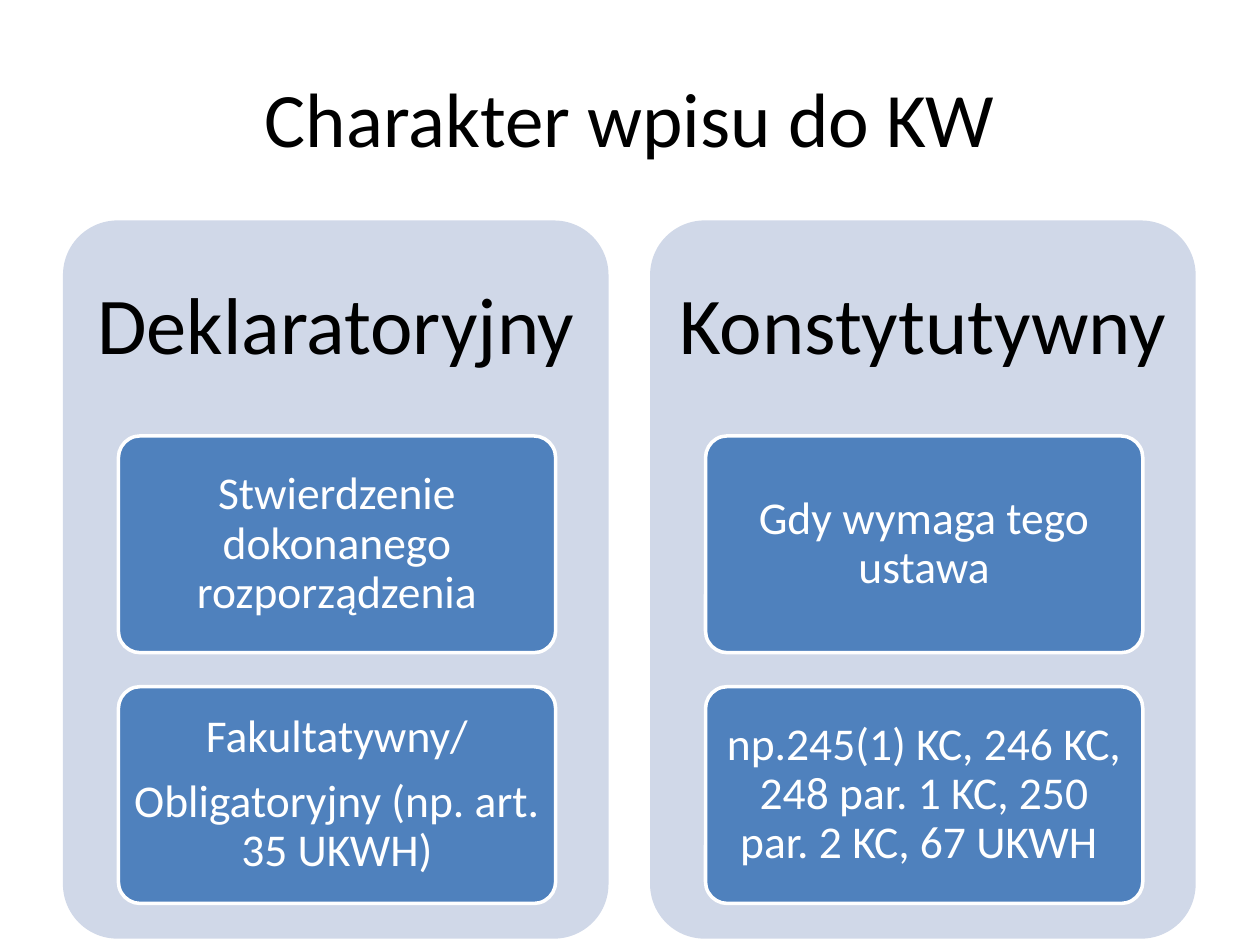
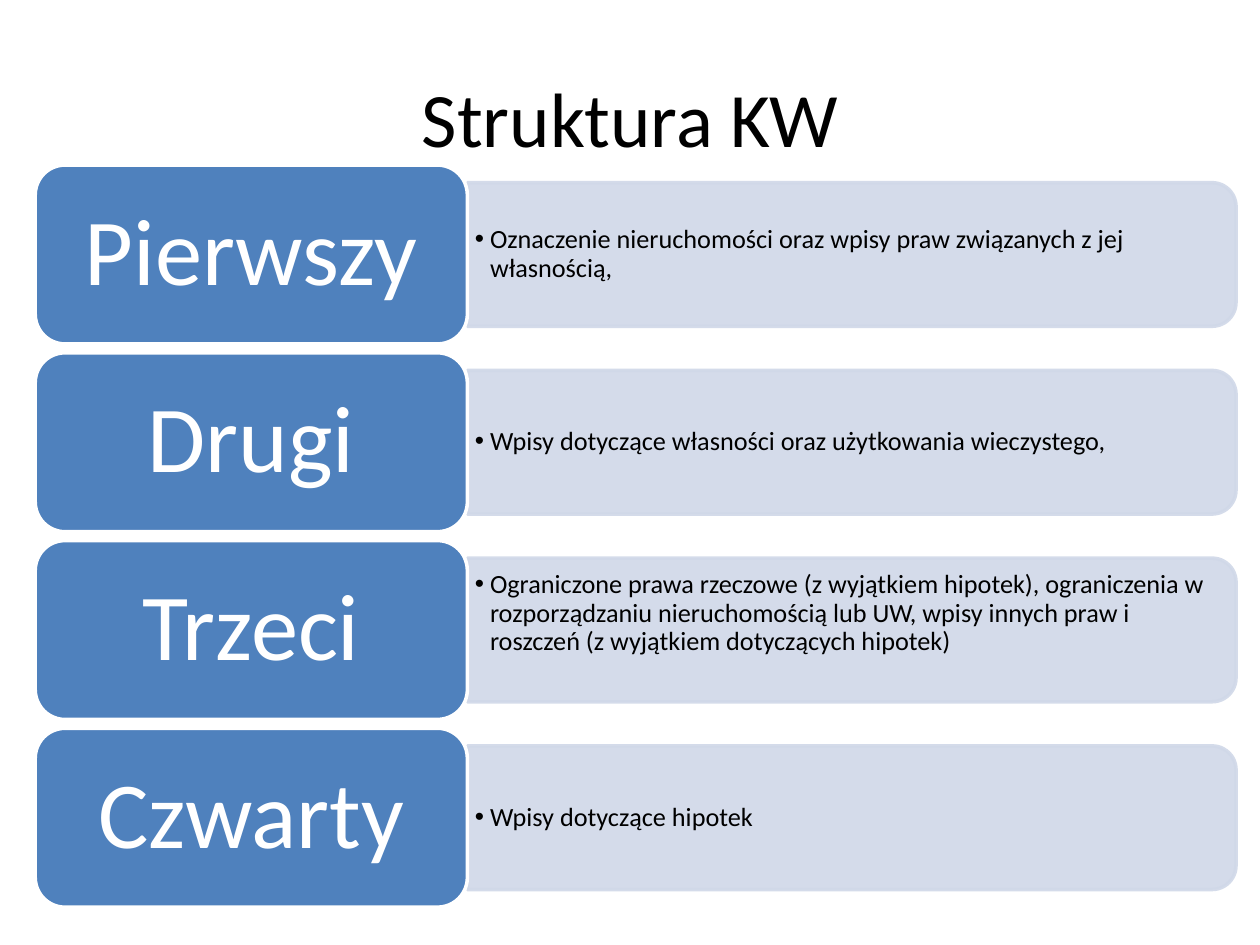
from lxml import etree
from pptx import Presentation
from pptx import util as u
from pptx.dml import color
from pptx.enum import shapes, text
from pptx.oxml import ns

PX = 9144
BLUE, PALE, WHITE, BLACK = "4F81BD", "D0D8E8", "FFFFFF", "000000"
ROUND = shapes.MSO_SHAPE.ROUNDED_RECTANGLE
TAB = shapes.MSO_SHAPE.ROUND_2_SAME_RECTANGLE


def rgb(value):
    return color.RGBColor.from_string(value)


def px(value):
    return u.Emu(value * PX)


class Deck:
    """Holds the shared style and the current slide."""

    font = "Calibri"

    def __init__(self):
        self.prs = Presentation()
        self.prs.slide_width, self.prs.slide_height = px(1000), px(750)

    def start(self, title):
        self.slide = self.prs.slides.add_slide(self.prs.slide_layouts[6])
        self.label((50, 30, 900, 125), [title], 44, BLACK, (10, 5, 10, 5), spacing=1, after=0)

    def fill_text(self, shape, lines, size, ink, insets, spacing=0.9, after=0.35, bullet=False):
        frame = shape.text_frame
        sides = ("margin_left", "margin_top", "margin_right", "margin_bottom")
        frame_format = dict(zip(sides, map(px, insets)), word_wrap=True,
                            vertical_anchor=text.MSO_ANCHOR.MIDDLE)
        align = text.PP_ALIGN.LEFT if bullet else text.PP_ALIGN.CENTER
        line_format = {"alignment": align, "line_spacing": spacing,
                       "space_after": u.Pt(round(size * after))}
        for name, value in frame_format.items():
            setattr(frame, name, value)
        for index, line in enumerate(lines):
            paragraph = frame.add_paragraph() if index else frame.paragraphs[0]
            if bullet:
                self.bullet(paragraph)
            for name, value in line_format.items():
                setattr(paragraph, name, value)
            run = paragraph.add_run()
            run.text = line
            for name, value in {"name": self.font, "size": u.Pt(size)}.items():
                setattr(run.font, name, value)
            run.font.color.rgb = rgb(ink)

    def bullet(self, paragraph):
        properties = paragraph._p.get_or_add_pPr()
        properties.set("marL", str(px(12)))
        properties.set("indent", str(px(-12)))
        etree.SubElement(properties, ns.qn("a:buFont")).set("typeface", "Arial")
        etree.SubElement(properties, ns.qn("a:buChar")).set("char", "•")

    def label(self, box, lines, size, ink, insets, **style):
        area = self.slide.shapes.add_textbox(*map(px, box))
        self.fill_text(area, lines, size, ink, insets, **style)

    def block(self, kind, box, fill, line=None, corner=None):
        shape = self.slide.shapes.add_shape(kind, *map(px, box))
        shape.shadow.inherit = False
        shape.fill.solid()
        shape.fill.fore_color.rgb = rgb(fill)
        if line:
            shape.line.color.rgb = rgb(line)
            shape.line.width = u.Pt(2)
        else:
            shape.line.fill.background()
        if corner:
            shape.adjustments[0] = corner
        return shape

    def card(self, box, lines, size, insets, corner=None):
        self.fill_text(self.block(ROUND, box, BLUE, WHITE, corner), lines, size, WHITE, insets)

    def tab(self, left, top, width, height):
        shift = (width - height) // 2
        shape = self.block(TAB, (left + shift, top - shift, height, width), PALE, PALE)
        shape.rotation = 90
        for tint in shape.element.spPr.iter(ns.qn("a:srgbClr")):
            etree.SubElement(tint, ns.qn("a:alpha")).set("val", "90000")


def entry_kinds(deck):
    kinds = [
        ("Deklaratoryjny", [["Stwierdzenie dokonanego rozporządzenia"],
                            ["Fakultatywny/", "Obligatoryjny (np. art. 35 UKWH)"]]),
        ("Konstytutywny", [["Gdy wymaga tego ustawa"],
                           ["np.245(1) KC, 246 KC, 248 par. 1 KC, 250 par. 2 KC, 67 UKWH "]]),
    ]
    deck.start("Charakter wpisu do KW")
    for column, (kind, features) in enumerate(kinds):
        left = 50 + 466 * column
        deck.block(ROUND, (left, 175, 433, 570), PALE, corner=0.1)
        deck.label((left, 175, 433, 171), [kind], 46, BLACK, (19, 19, 19, 19))
        for row, lines in enumerate(features):
            deck.card((left + 44, 346 + 199 * row, 347, 172), lines, 26, (7, 5, 7, 5), 0.1)


def register_sections(deck):
    sections = [
        ("Pierwszy", "Oznaczenie nieruchomości oraz wpisy praw związanych z jej własnością,", 3),
        ("Drugi", "Wpisy dotyczące własności oraz użytkowania wieczystego,", 3),
        ("Trzeci", "Ograniczone prawa rzeczowe (z wyjątkiem hipotek), ograniczenia w "
                   "rozporządzaniu nieruchomością lub UW, wpisy innych praw i roszczeń "
                   "(z wyjątkiem dotyczących hipotek)", 29),
        ("Czwarty", "Wpisy dotyczące hipotek", 3),
    ]
    deck.start("Struktura KW")
    for row, (section, content, bottom) in enumerate(sections):
        top = 131 + 149 * row
        deck.tab(371, top + 14, 610, 114)
        deck.label((371, top + 20, 604, 102), [content], 15, BLACK, (6, 3, 6, bottom),
                   after=0.15, bullet=True)
        deck.card((28, top, 343, 142), [section], 54, (23, 11, 23, 11))


def main():
    deck = Deck()
    entry_kinds(deck)
    register_sections(deck)
    deck.prs.save("out.pptx")


if __name__ == "__main__":
    main()
